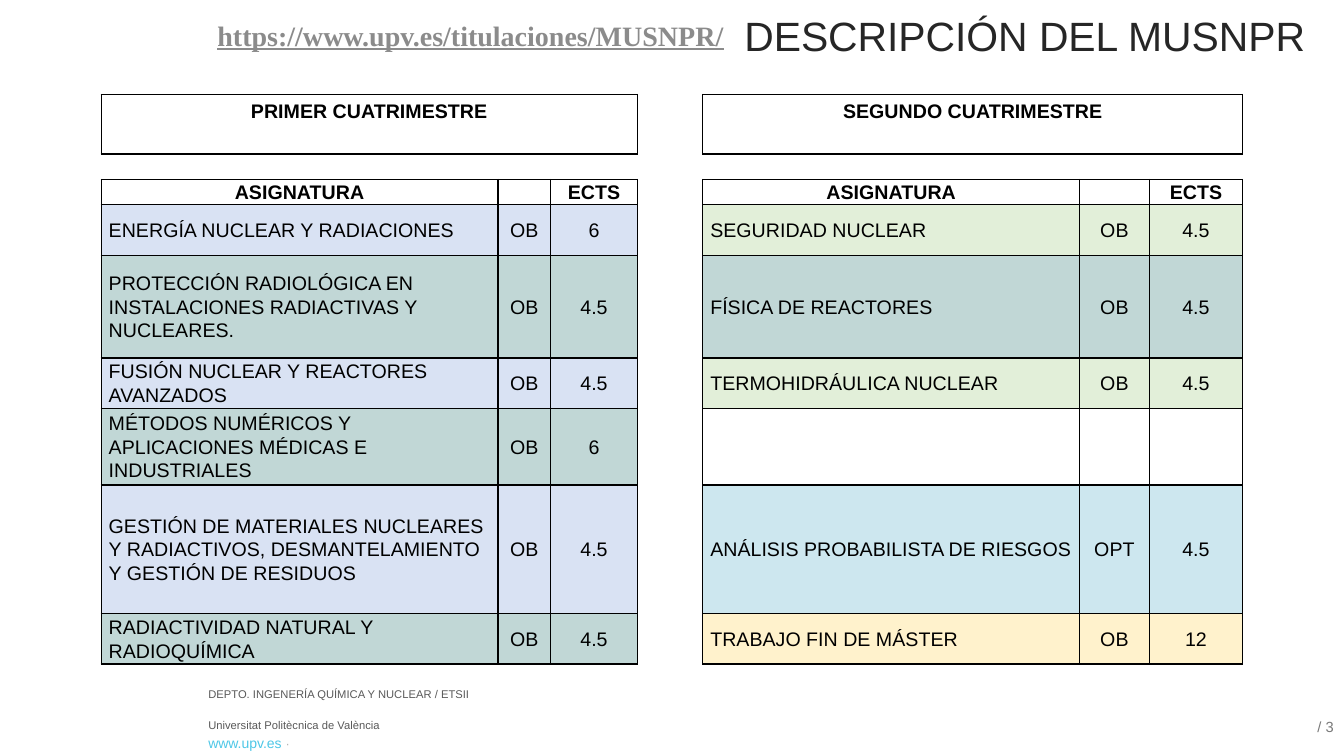
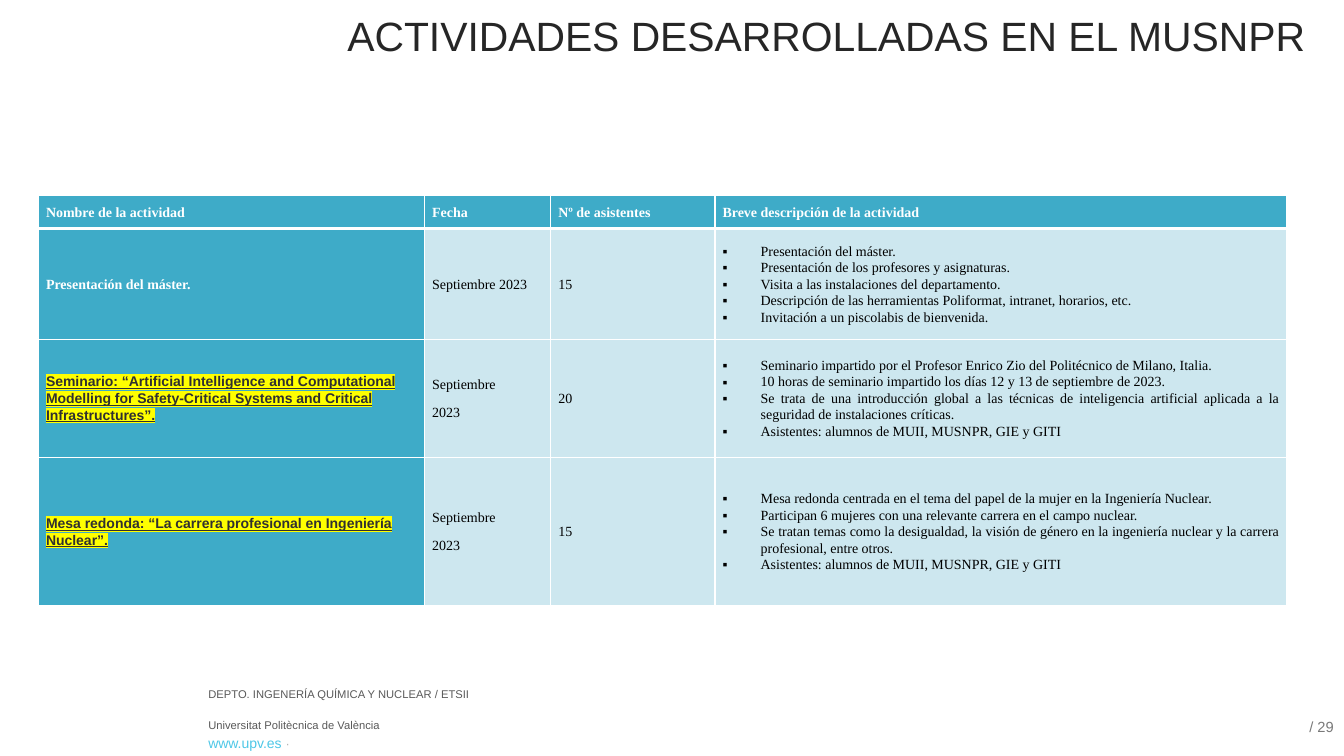
import pptx
import pptx.util
import pptx.dml.color
import pptx.enum.text
import pptx.oxml.ns
import lxml.etree

Cm = pptx.util.Cm
Pt = pptx.util.Pt
ALIGN = pptx.enum.text.PP_ALIGN
ANCHOR = pptx.enum.text.MSO_ANCHOR
qn = pptx.oxml.ns.qn

COLORS = {
    "white": "FFFFFF", "black": "000000", "title": "262626", "footer": "595959",
    "cyan": "4EC7E7", "dot": "B5B5B5", "page": "797979", "link": "8B8B8B",
    "blue": "D9E2F3", "teal": "C1D7D6", "green": "E2EFD9", "sky": "CDE7EF",
    "cream": "FFF2CC", "header": "3EABC8", "dark": "303030", "yellow": "FFFF00",
}
SANS, SERIF = "Arial", "Times New Roman"
SIDES = {"left": "lnL", "right": "lnR", "top": "lnT", "bottom": "lnB"}

FIRST_TERM = [
    ("ENERGÍA NUCLEAR Y RADIACIONES", "OB", "6", "blue"),
    ("PROTECCIÓN RADIOLÓGICA EN INSTALACIONES RADIACTIVAS Y NUCLEARES.", "OB", "4.5", "teal"),
    ("FUSIÓN NUCLEAR Y REACTORES AVANZADOS", "OB", "4.5", "blue"),
    ("MÉTODOS NUMÉRICOS Y APLICACIONES MÉDICAS E INDUSTRIALES", "OB", "6", "teal"),
    ("GESTIÓN DE MATERIALES NUCLEARES Y RADIACTIVOS, DESMANTELAMIENTO Y GESTIÓN DE RESIDUOS",
     "OB", "4.5", "blue"),
    ("RADIACTIVIDAD NATURAL Y RADIOQUÍMICA", "OB", "4.5", "teal"),
]
SECOND_TERM = [
    ("SEGURIDAD NUCLEAR", "OB", "4.5", "green"),
    ("FÍSICA DE REACTORES", "OB", "4.5", "teal"),
    ("TERMOHIDRÁULICA NUCLEAR", "OB", "4.5", "green"),
    ("", "", "", "white"),
    ("ANÁLISIS PROBABILISTA DE RIESGOS", "OPT", "4.5", "sky"),
    ("TRABAJO FIN DE MÁSTER", "OB", "12", "cream"),
]
ACTIVITY_HEADER = ["Nombre de la actividad", "Fecha", "Nº de asistentes",
                   "Breve descripción de la actividad"]
ACTIVITIES = [
    ("Presentación del máster.", "Septiembre 2023", "15",
     "Presentación del máster.\n"
     "Presentación de los profesores y asignaturas.\n"
     "Visita a las instalaciones del departamento.\n"
     "Descripción de las herramientas Poliformat, intranet, horarios, etc.\n"
     "Invitación a un piscolabis de bienvenida."),
    ("Seminario: “Artificial Intelligence and Computational Modelling for Safety-Critical "
     "Systems and Critical Infrastructures”.", "Septiembre\n2023", "20",
     "Seminario impartido por el Profesor Enrico Zio del Politécnico de Milano, Italia.\n"
     "10 horas de seminario impartido los días 12 y 13 de septiembre de 2023.\n"
     "Se trata de una introducción global a las técnicas de inteligencia artificial aplicada "
     "a la seguridad de instalaciones críticas.\n"
     "Asistentes: alumnos de MUII, MUSNPR, GIE y GITI"),
    ("Mesa redonda: “La carrera profesional en Ingeniería Nuclear”.", "Septiembre\n2023", "15",
     "Mesa redonda centrada en el tema del papel de la mujer en la Ingeniería Nuclear.\n"
     "Participan 6 mujeres con una relevante carrera en el campo nuclear.\n"
     "Se tratan temas como la desigualdad, la visión de género en la ingeniería nuclear y la "
     "carrera profesional, entre otros.\n"
     "Asistentes: alumnos de MUII, MUSNPR, GIE y GITI"),
]


def rgb(name):
    return pptx.dml.color.RGBColor.from_string(COLORS[name])


def add_span(para, text, size=14, color="black", font=SANS, bold=False,
             underline=False, highlight=None):
    span = para.add_run()
    span.text = text
    span.font.size = Pt(size)
    span.font.name = font
    span.font.bold = bold
    span.font.underline = underline
    span.font.color.rgb = rgb(color)
    if highlight:
        mark = lxml.etree.Element(qn("a:highlight"))
        lxml.etree.SubElement(mark, qn("a:srgbClr")).set("val", COLORS[highlight])
        span.font._element.find(qn("a:solidFill")).addnext(mark)


def add_bullet(para):
    properties = para._p.get_or_add_pPr()
    properties.set("marL", str(Cm(0.96)))
    properties.set("indent", str(-Cm(0.96)))
    lxml.etree.SubElement(properties, qn("a:buFont")).set("typeface", SANS)
    lxml.etree.SubElement(properties, qn("a:buChar")).set("char", "▪")


def write(frame, text, align=ALIGN.LEFT, spacing=1.0, after=0, bullet=False, **style):
    for number, line in enumerate(text.split("\n")):
        para = frame.add_paragraph() if number else frame.paragraphs[0]
        if bullet:
            add_bullet(para)
        para.alignment = align
        para.line_spacing = spacing
        para.space_before = Pt(0)
        para.space_after = Pt(after)
        if line:
            add_span(para, line, **style)
        else:
            ending = lxml.etree.SubElement(para._p, qn("a:endParaRPr"))
            ending.set("sz", str(style.get("size", 14) * 100))
    return frame.paragraphs[-1]


def add_text(page, left, top, width, height, text, anchor=ANCHOR.TOP, **style):
    box = page.shapes.add_textbox(Cm(left), Cm(top), Cm(width), Cm(height))
    box.text_frame.word_wrap = True
    box.text_frame.vertical_anchor = anchor
    return box, write(box.text_frame, text, **style)


def add_layout_footer(page, left=5, top=17.2):
    department, _ = add_text(page, left, top, 9.12, 0.58, size=8, color="footer",
                             text="DEPTO. INGENERÍA QUÍMICA Y NUCLEAR / ETSII")
    university, _ = add_text(page, left, top + 0.78, 7.34, 0.6, size=8, color="footer",
                             text="Universitat Politècnica de València")
    website, para = add_text(page, left, top + 1.19, 8.03, 0.7, "www.upv.es ",
                             size=10, color="cyan")
    add_span(para, "·", size=9, color="dot")
    for box in (department, university, website):
        page.slide_layout.shapes.element.append(box.element)


def add_page(deck, title, number):
    page = deck.slides.add_slide(deck.slide_layouts[5])
    heading = page.shapes.title
    heading.left, heading.top, heading.width, heading.height = (
        Cm(1.7), Cm(0.33), Cm(31.45), Cm(1.32))
    heading.text_frame.word_wrap = True
    heading.text_frame.vertical_anchor = ANCHOR.MIDDLE
    write(heading.text_frame, title, align=ALIGN.RIGHT, spacing=0.8,
          size=29.2, color="title")
    add_text(page, 30, 17.96, 3.86, 0.7, f"/ {number}", anchor=ANCHOR.MIDDLE,
             align=ALIGN.RIGHT, size=10.5, color="page")
    return page


def add_grid(page, left, top, widths, heights):
    grid = page.shapes.add_table(len(heights), len(widths), Cm(left), Cm(top),
                                 Cm(sum(widths)), Cm(sum(heights))).table
    grid.horz_banding = False
    for column, width in zip(grid.columns, widths):
        column.width = Cm(width)
    for row, height in zip(grid.rows, heights):
        row.height = Cm(height)
    return grid


def dress_cell(cell, fill, line, widths):
    properties = cell._tc.get_or_add_tcPr()
    for side, tag in SIDES.items():
        edge = lxml.etree.SubElement(properties, qn(f"a:{tag}"))
        width = widths.get(side, 0)
        edge.set("w", str(Pt(width)))
        if width:
            paint = lxml.etree.SubElement(edge, qn("a:solidFill"))
            lxml.etree.SubElement(paint, qn("a:srgbClr")).set("val", COLORS[line])
        else:
            lxml.etree.SubElement(edge, qn("a:noFill"))
    cell.fill.solid()
    cell.fill.fore_color.rgb = rgb(fill)
    cell.vertical_anchor = ANCHOR.MIDDLE
    cell.margin_left = cell.margin_right = Cm(0.19)
    cell.margin_top = cell.margin_bottom = 0


def fill_term(grid, first_column, name, courses):
    heading = grid.cell(0, first_column)
    heading.merge(grid.cell(0, first_column + 2))
    heading.vertical_anchor = ANCHOR.TOP
    heading.margin_top = Cm(0.13)
    write(heading.text_frame, name, align=ALIGN.CENTER, spacing=1.07, bold=True)
    rows = [("ASIGNATURA", "", "ECTS", "white")] + courses
    for row, (*texts, fill) in enumerate(rows, start=2):
        for offset, text in enumerate(texts):
            cell = grid.cell(row, first_column + offset)
            cell.fill.fore_color.rgb = rgb(fill)
            centred = row == 2 or offset
            write(cell.text_frame, text, spacing=1.07, bold=row == 2,
                  align=ALIGN.CENTER if centred else ALIGN.LEFT)


def add_course_table(page, left, top):
    gap_row, gap_column = 1, 3
    grid = add_grid(page, left, top, [10, 1.33, 2.18, 1.65, 9.5, 1.75, 2.36],
                    [1.5, 0.64, 0.64, 1.27, 2.59, 1.27, 1.93, 3.24, 1.27])
    for row in range(len(grid.rows)):
        for column in range(len(grid.columns)):
            sides = set(SIDES)
            if row == gap_row:
                sides -= {"left", "right"}
            if column == gap_column:
                sides -= {"top", "bottom"}
            cell = grid.cell(row, column)
            dress_cell(cell, "white", "black", dict.fromkeys(sides, 1))
            if row == gap_row or column == gap_column:
                write(cell.text_frame, "", size=10)
    fill_term(grid, 0, "PRIMER CUATRIMESTRE", FIRST_TERM)
    fill_term(grid, gap_column + 1, "SEGUNDO CUATRIMESTRE", SECOND_TERM)


def activity_style(row, column):
    if row == 0 or (row == 1 and column == 0):
        return dict(font=SERIF, color="white", bold=True)
    if column == 0:
        return dict(color="dark", bold=True, underline=True, highlight="yellow")
    if column == 3:
        return dict(font=SERIF, align=ALIGN.JUSTIFY, bullet=True)
    return dict(font=SERIF, after=8)


def add_activity_table(page, left, top):
    grid = add_grid(page, left, top, [9.73, 3.18, 4.14, 14.4], [0.84, 2.79, 2.97, 3.75])
    for row, texts in enumerate([ACTIVITY_HEADER] + ACTIVITIES):
        widths = dict.fromkeys(SIDES, 1)
        if row < 2:
            widths["top" if row else "bottom"] = 3
        for column, text in enumerate(texts):
            cell = grid.cell(row, column)
            fill = "sky" if row and column else "header"
            dress_cell(cell, fill, "white", widths)
            write(cell.text_frame, text, size=10, spacing=1.07,
                  **activity_style(row, column))


def main():
    deck = pptx.Presentation()
    deck.slide_width, deck.slide_height = Cm(33.87), Cm(19.05)

    courses = add_page(deck, "DESCRIPCIÓN DEL MUSNPR", 3)
    add_layout_footer(courses)
    add_course_table(courses, 2.55, 2.38)
    add_text(courses, 5.23, 0.33, 13.6, 1.96, "https://www.upv.es/titulaciones/MUSNPR/",
             size=20, font=SERIF, color="link", bold=True, underline=True)

    activities = add_page(deck, "ACTIVIDADES DESARROLLADAS EN EL MUSNPR", 29)
    add_activity_table(activities, 0.97, 4.92)

    deck.save("out.pptx")


if __name__ == "__main__":
    main()
